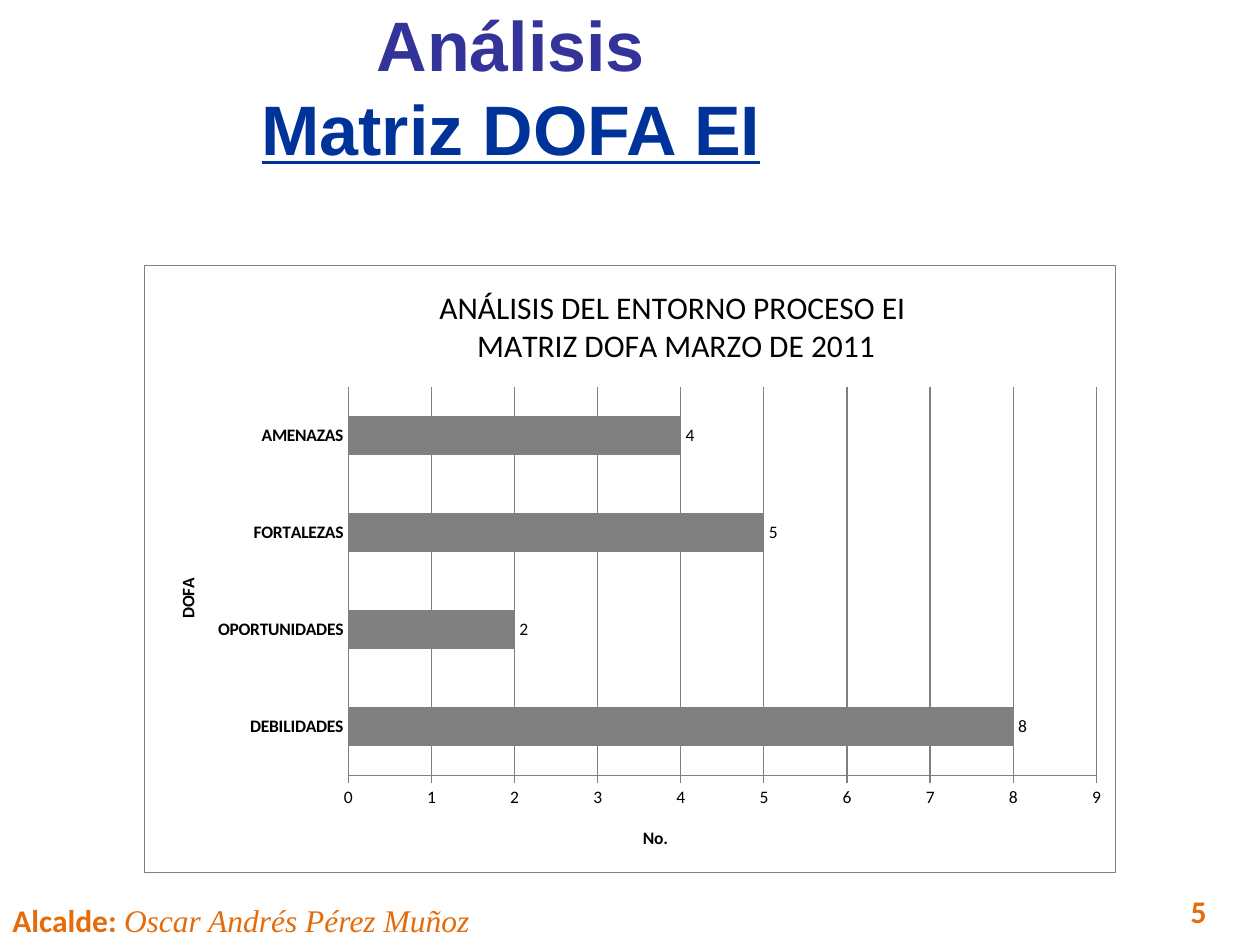
from lxml import etree
from pptx import Presentation
from pptx.chart.data import CategoryChartData
from pptx.dml.color import RGBColor
from pptx.enum import chart as ch, text
from pptx.oxml import parse_xml
from pptx.oxml.ns import nsdecls, qn
from pptx.util import Pt

ORANGE, GRAY, BLACK = "E46C0A", "808080", "000000"


def add_run(p, txt, size=18, font="Calibri", color=BLACK, bold=False,
            italic=False, underline=False, shadow=False):
    r = p.add_run()
    r.text = txt
    f = r.font
    f.size, f.name, f.bold, f.italic, f.underline = Pt(size), font, bold, italic, underline
    f.color.rgb = RGBColor.from_string(color)
    if shadow:
        r._r.rPr.find(qn("a:solidFill")).addnext(parse_xml(
            f'<a:effectLst {nsdecls("a")}><a:outerShdw blurRad="38100" dist="38100" '
            'dir="2700000" algn="tl"><a:srgbClr val="000000"><a:alpha val="43000"/>'
            '</a:srgbClr></a:outerShdw></a:effectLst>'))


def set_layout(parent, index, **values):
    for old in parent.findall(qn("c:layout")):
        parent.remove(old)
    layout = etree.Element(qn("c:layout"))
    manual = etree.SubElement(layout, qn("c:manualLayout"))
    if "w" in values:
        etree.SubElement(manual, qn("c:layoutTarget")).set("val", "inner")
    for axis in "xy":
        etree.SubElement(manual, qn(f"c:{axis}Mode")).set("val", "edge")
    for key, value in values.items():
        etree.SubElement(manual, qn(f"c:{key}")).set("val", str(value))
    parent.insert(index, layout)


prs = Presentation()
prs.slide_width, prs.slide_height = Pt(720), Pt(540)
s = prs.slides.add_slide(prs.slide_layouts[5])

# Footer: page number and mayor
footers = [
    (673.2, 506.2, 46.8, [("5", dict(bold=True))]),
    (0, 511.2, 283, [("Alcalde: ", dict(bold=True)),
                     ("Oscar Andrés Pérez Muñoz", dict(font="Times New Roman", italic=True))]),
]
for x, y, w, runs in footers:
    tf = s.shapes.add_textbox(Pt(x), Pt(y), Pt(w), Pt(28.8)).text_frame
    tf.word_wrap = False
    tf.auto_size = text.MSO_AUTO_SIZE.SHAPE_TO_FIT_TEXT
    for txt, fmt in runs:
        add_run(tf.paragraphs[0], txt, color=ORANGE, shadow=True, **fmt)

# Title
sp = s.shapes.title
sp.left, sp.top, sp.width, sp.height = Pt(93.6), Pt(3.6), Pt(396.7), Pt(90)
tf = sp.text_frame
tf.word_wrap = True
tf.auto_size = text.MSO_AUTO_SIZE.NONE
tf.vertical_anchor = text.MSO_ANCHOR.MIDDLE
p = tf.paragraphs[0]
p.alignment = text.PP_ALIGN.CENTER
add_run(p, "Análisis", size=40, font="Arial", color="333399", bold=True)
p.add_line_break()
add_run(p, "Matriz DOFA EI", size=40, font="Arial", color="003399", bold=True, underline=True)

# Bar chart
data = CategoryChartData()
data.categories = ["DEBILIDADES", "OPORTUNIDADES", "FORTALEZAS", "AMENAZAS"]
data.add_series("Series 1", [8, 2, 5, 4])
chart = s.shapes.add_chart(ch.XL_CHART_TYPE.BAR_CLUSTERED, Pt(82), Pt(151.2),
                           Pt(556), Pt(347.8), data).chart
chart.has_legend = False
chart.font.size, chart.font.name = Pt(10), "Calibri"
chart.font.color.rgb = RGBColor.from_string(BLACK)

# Chart title
chart.has_title = True
tf = chart.chart_title.text_frame
add_run(tf.paragraphs[0], "ANÁLISIS DEL ENTORNO PROCESO EI ")
add_run(tf.add_paragraph(), "MATRIZ DOFA MARZO DE 2011")
set_layout(chart.chart_title._element, 1, x=0.3, y=0.03)

# Bars and value labels
plot = chart.plots[0]
plot.gap_width = 150
plot.vary_by_categories = False
fill = plot.series[0].format.fill
fill.solid()
fill.fore_color.rgb = RGBColor.from_string(GRAY)
plot.has_data_labels = True
labels = plot.data_labels
labels.show_value = True
labels.position = ch.XL_LABEL_POSITION.OUTSIDE_END
labels.font.size, labels.font.name = Pt(10), "Calibri"
labels.font.color.rgb = RGBColor.from_string(BLACK)

# Axes
cat, val = chart.category_axis, chart.value_axis
for axis, name, x, y, tick, bold in [
        (cat, "DOFA", 0.03, 0.51, ch.XL_TICK_MARK.NONE, True),
        (val, "No.", 0.51, 0.92, ch.XL_TICK_MARK.CROSS, False)]:
    axis.has_title = True
    add_run(axis.axis_title.text_frame.paragraphs[0], name, size=10, bold=True)
    set_layout(axis.axis_title._element, 1, x=x, y=y)
    axis.major_tick_mark, axis.minor_tick_mark = tick, ch.XL_TICK_MARK.NONE
    f = axis.tick_labels.font
    f.size, f.name, f.bold = Pt(10), "Calibri", bold
    f.color.rgb = RGBColor.from_string(BLACK)
cat.axis_title.text_frame._txBody.bodyPr.set("rot", "-5400000")
cat.axis_title.text_frame._txBody.bodyPr.set("vert", "horz")
cat.has_major_gridlines = False
val.has_major_gridlines = True
val.minimum_scale, val.maximum_scale, val.major_unit = 0, 9, 1
for line in (cat.format.line, val.format.line, val.major_gridlines.format.line):
    line.width = Pt(0.75)
    line.color.rgb = RGBColor.from_string(GRAY)

# Plot area and chart border
space = chart._chartSpace
area = space.chart.plotArea
set_layout(area, 0, x=0.21, y=0.2, w=0.77, h=0.64)
area.append(parse_xml(f'<c:spPr {nsdecls("c", "a")}><a:solidFill><a:srgbClr val="FFFFFF"/>'
                      '</a:solidFill></c:spPr>'))
space.chart.addnext(parse_xml(
    f'<c:spPr {nsdecls("c", "a")}><a:solidFill><a:srgbClr val="FFFFFF"/></a:solidFill>'
    f'<a:ln w="9525"><a:solidFill><a:srgbClr val="{GRAY}"/></a:solidFill></a:ln></c:spPr>'))

prs.save("out.pptx")
